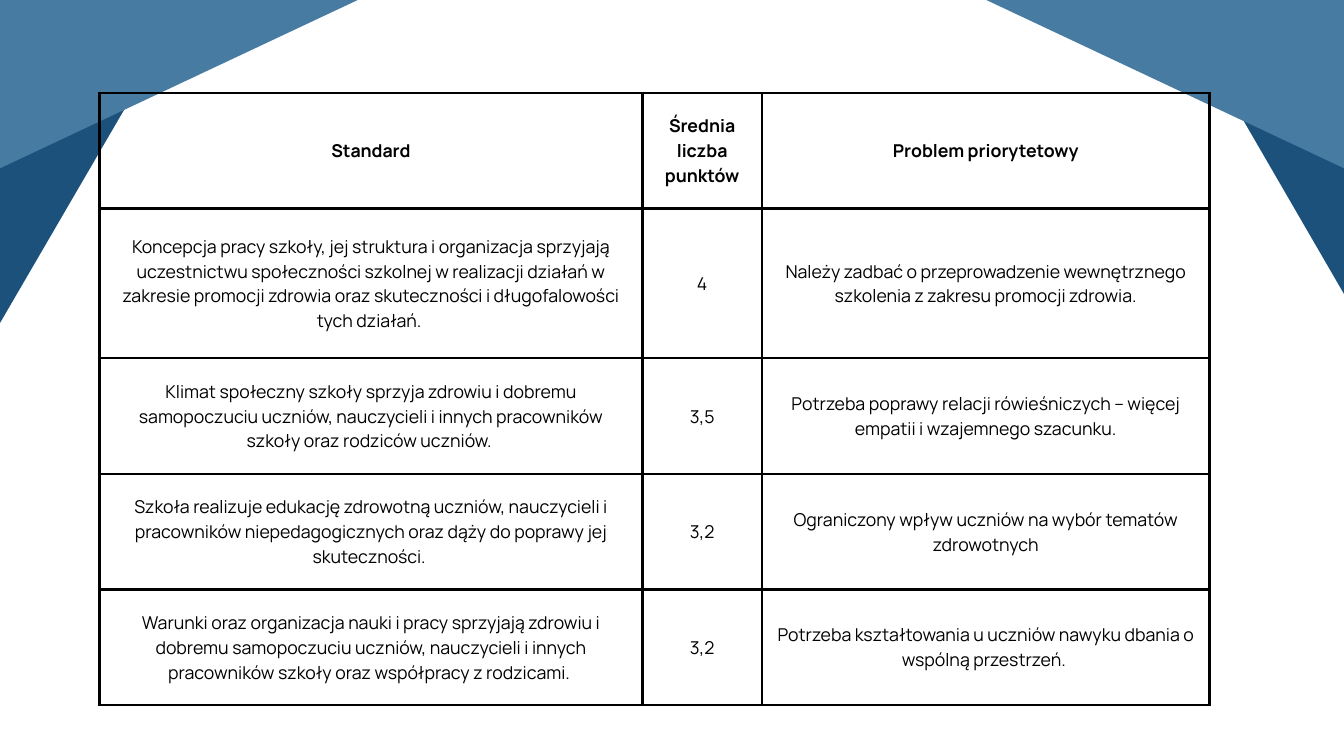
import dataclasses

import lxml.etree
import pptx
import pptx.dml.color
import pptx.enum.shapes
import pptx.enum.text
import pptx.oxml.ns
import pptx.util

Cm = pptx.util.Cm
Pt = pptx.util.Pt


@dataclasses.dataclass(frozen=True)
class Theme:
    background: str = "FFFFFF"
    dark_blue: str = "1B517B"
    light_blue: str = "487BA2"
    ink: str = "000000"
    font: str = "Manrope"
    text_size: float = 19
    line_spacing: float = 26.6
    border_width: float = 3


THEME = Theme()
SLIDE_WIDTH, SLIDE_HEIGHT = 50.8, 28.58

# Lengths in centimetres
TABLE_BOX = (3.76, 3.51, 41.96, 23.14)
COLUMN_WIDTHS = (20.52, 4.52, 16.92)
HEADER_HEIGHT, FIRST_ROW_HEIGHT = 4.37, 5.66
CELL_MARGIN = 0.53

ROWS = (
    ("Standard", "Średnia liczba punktów", "Problem priorytetowy"),
    ("Koncepcja pracy szkoły, jej struktura i organizacja sprzyjają uczestnictwu "
     "społeczności szkolnej w realizacji działań w zakresie promocji zdrowia oraz "
     "skuteczności i długofalowości tych działań. ",
     "4",
     "Należy zadbać o przeprowadzenie wewnętrznego szkolenia z zakresu promocji zdrowia."),
    ("Klimat społeczny szkoły sprzyja zdrowiu i dobremu samopoczuciu uczniów, "
     "nauczycieli i innych pracowników szkoły oraz rodziców uczniów. ",
     "3,5",
     "Potrzeba poprawy relacji rówieśniczych – więcej empatii i wzajemnego szacunku."),
    ("Szkoła realizuje edukację zdrowotną uczniów, nauczycieli i pracowników "
     "niepedagogicznych oraz dąży do poprawy jej skuteczności. ",
     "3,2",
     "Ograniczony wpływ uczniów na wybór tematów zdrowotnych"),
    ("Warunki oraz organizacja nauki i pracy sprzyjają zdrowiu i dobremu samopoczuciu "
     "uczniów, nauczycieli i innych pracowników szkoły oraz współpracy z rodzicami. ",
     "3,2",
     "Potrzeba kształtowania u uczniów nawyku dbania o wspólną przestrzeń. "),
)


def rgb(value):
    return pptx.dml.color.RGBColor.from_string(value)


def add_corner_bands(slide, box):
    """Tilted bands that bleed off the two upper corners of the box."""
    left, top, width, _ = box
    light_width, light_height, light_top, light_inset = 11.28, 22.96, -14.02, 0.03
    bands = (
        (44.04, -19.15, 7.14, 35.28, 329.9, THEME.dark_blue),
        (-3.86, -25.91, 11.28, 47.7, 30.2, THEME.dark_blue),
        (light_inset, light_top, light_width, light_height, 244.8, THEME.light_blue),
        (width - light_inset - light_width, light_top, light_width, light_height,
         295.2, THEME.light_blue),
    )
    for x, y, band_width, band_height, angle, color in bands:
        band = slide.shapes.add_shape(
            pptx.enum.shapes.MSO_SHAPE.RECTANGLE,
            Cm(left + x), Cm(top + y), Cm(band_width), Cm(band_height))
        band.rotation = angle
        band.shadow.inherit = False
        band.fill.solid()
        band.fill.fore_color.rgb = rgb(color)
        band.line.fill.background()


def set_cell_borders(cell):
    properties = cell._tc.get_or_add_tcPr()
    for position, side in enumerate(("lnL", "lnR", "lnT", "lnB")):
        line = lxml.etree.Element(
            pptx.oxml.ns.qn(f"a:{side}"), w=str(Pt(THEME.border_width)))
        fill = lxml.etree.SubElement(line, pptx.oxml.ns.qn("a:solidFill"))
        lxml.etree.SubElement(fill, pptx.oxml.ns.qn("a:srgbClr"), val=THEME.ink)
        properties.insert(position, line)


def format_cell(cell, text, bold):
    cell.fill.background()
    set_cell_borders(cell)
    cell.vertical_anchor = pptx.enum.text.MSO_ANCHOR.MIDDLE
    cell.margin_left = cell.margin_right = Cm(CELL_MARGIN)
    cell.margin_top = cell.margin_bottom = Cm(CELL_MARGIN)
    cell.text_frame.text = text
    paragraph = cell.text_frame.paragraphs[0]
    paragraph.alignment = pptx.enum.text.PP_ALIGN.CENTER
    paragraph.line_spacing = Pt(THEME.line_spacing)
    font = paragraph.runs[0].font
    font.name = THEME.font
    font.size = Pt(THEME.text_size)
    font.bold = bold
    font.color.rgb = rgb(THEME.ink)


def add_standards_table(slide, box):
    """Standards, their mean scores and the priority problems."""
    table = slide.shapes.add_table(
        len(ROWS), len(COLUMN_WIDTHS), *(Cm(length) for length in box)).table
    table.first_row = False
    table.horz_banding = False
    for column, width in zip(table.columns, COLUMN_WIDTHS):
        column.width = Cm(width)
    for row_index, texts in enumerate(ROWS):
        height = FIRST_ROW_HEIGHT if row_index == 1 else HEADER_HEIGHT
        table.rows[row_index].height = Cm(height)
        for column_index, text in enumerate(texts):
            format_cell(table.cell(row_index, column_index), text, bold=row_index == 0)


def main():
    presentation = pptx.Presentation()
    presentation.slide_width = Cm(SLIDE_WIDTH)
    presentation.slide_height = Cm(SLIDE_HEIGHT)

    # Blank layout: the slide has neither title nor body text
    slide = presentation.slides.add_slide(presentation.slide_layouts[6])
    slide.background.fill.solid()
    slide.background.fill.fore_color.rgb = rgb(THEME.background)

    add_corner_bands(slide, (0, 0, SLIDE_WIDTH, SLIDE_HEIGHT))
    add_standards_table(slide, TABLE_BOX)
    presentation.save("out.pptx")


if __name__ == "__main__":
    main()
